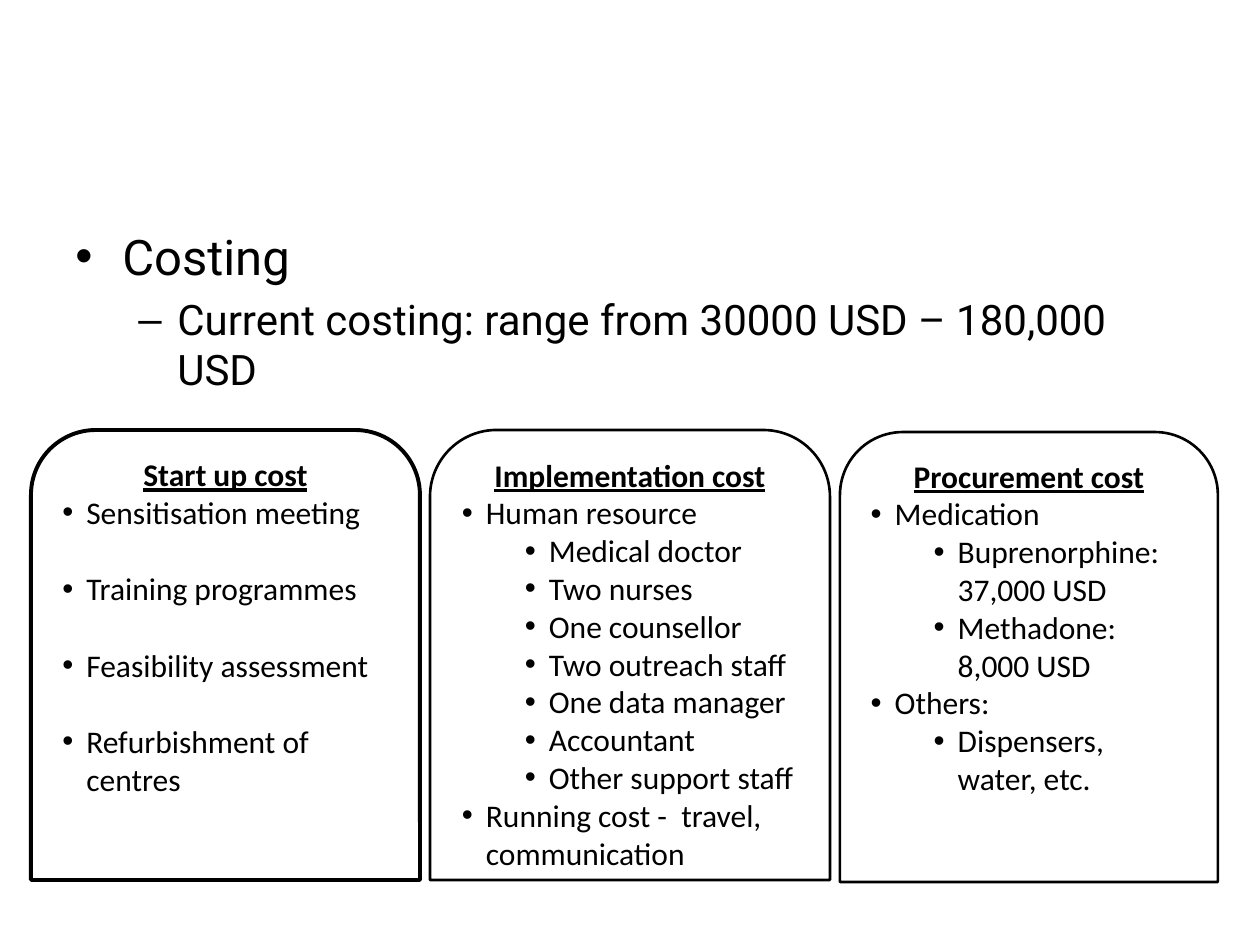
from lxml import etree
from pptx import Presentation
from pptx.dml.color import RGBColor
from pptx.enum.shapes import MSO_SHAPE
from pptx.enum.text import MSO_ANCHOR, PP_ALIGN
from pptx.oxml.ns import qn
from pptx.util import Emu, Pt

CARD_SHAPE = MSO_SHAPE.ROUND_2_SAME_RECTANGLE
TOP = MSO_ANCHOR.TOP
LEFT, CENTER = PP_ALIGN.LEFT, PP_ALIGN.CENTER
BLACK, WHITE = "000000", "FFFFFF"
PX_PER_INCH = 126


def px(count):
    return Emu(round(count * 914400 / PX_PER_INCH))


def color(hex_text):
    return RGBColor.from_string(hex_text)


def add_bullet(para, symbol, margin, hang):
    properties = para._p.get_or_add_pPr()
    properties.set("marL", str(px(margin)))
    properties.set("indent", str(-px(hang)))
    font = etree.SubElement(properties, qn("a:buFont"))
    font.set("typeface", "Arial")
    etree.SubElement(properties, qn("a:buChar")).set("char", symbol)


def style(para, font_name, size, bold=False):
    for span in para.runs:
        span.font.name = font_name
        span.font.size = Pt(size)
        span.font.bold = span.font.underline = bold
        span.font.color.rgb = color(BLACK)


def add_intro(page, left, top, width, height, lines):
    box = page.shapes.add_textbox(px(left), px(top), px(width), px(height))
    frame = box.text_frame
    frame.word_wrap = True
    frame.text = "\n".join(text for text, *_ in lines)
    for para, (_, symbol, margin, hang, size, level) in zip(frame.paragraphs, lines):
        para.level = level
        add_bullet(para, symbol, margin, hang)
        if level:
            para.space_before = Pt(size * 0.2)
        style(para, "Roboto", size)


def add_card(page, left, top, width, height, line_width, gap, heading, items):
    card = page.shapes.add_shape(CARD_SHAPE, px(left), px(top), px(width), px(height))
    card.shadow.inherit = False
    card.fill.solid()
    card.fill.fore_color.rgb = color(WHITE)
    card.line.color.rgb = color(BLACK)
    card.line.width = Pt(line_width)

    frame = card.text_frame
    frame.word_wrap = True
    frame.vertical_anchor = TOP
    frame.text = "\n".join([heading] + [text for _, text in items])
    title, *entries = frame.paragraphs
    title.alignment = CENTER
    style(title, "Calibri", 18, bold=True)
    for index, (para, (level, _)) in enumerate(zip(entries, items)):
        para.alignment = LEFT
        para.level = level
        add_bullet(para, "•", 24 + 63 * level, 24)
        if index:
            para.space_before = Pt(gap)
        style(para, "Calibri", 18)


INTRO = [
    # text, bullet, margin, hang, size, level
    ("Costing", "•", 47, 47, 28, 0),
    ("Current costing: range from 30000 USD – 180,000 USD", "–", 102, 39, 24, 1),
]
STAFF = ["Medical doctor", "Two nurses", "One counsellor", "Two outreach staff",
         "One data manager", "Accountant", "Other support staff"]
CARDS = [
    # left, top, width, line width, gap between items, heading, (level, item)
    (31, 430, 389, 2.25, 22, "Start up cost", [
        (0, "Sensitisation meeting"),
        (0, "Training programmes"),
        (0, "Feasibility assessment"),
        (0, "Refurbishment of centres"),
    ]),
    (430, 430, 400, 1.5, 0, "Implementation cost", [
        (0, "Human resource"),
        *[(1, role) for role in STAFF],
        (0, "Running cost -  travel, communication"),
    ]),
    (840, 432, 378, 1.5, 0, "Procurement cost", [
        (0, "Medication"),
        (1, "Buprenorphine: 37,000 USD"),
        (1, "Methadone: 8,000 USD"),
        (0, "Others:"),
        (1, "Dispensers, water, etc."),
    ]),
]


def main():
    deck = Presentation()
    deck.slide_width, deck.slide_height = px(1260), px(945)
    page = deck.slides.add_slide(deck.slide_layouts[6])

    # Costing range
    add_intro(page, 63, 220, 1134, 210, INTRO)

    # Cost breakdown cards
    for left, top, width, line_width, gap, heading, items in CARDS:
        add_card(page, left, top, width, 450, line_width, gap, heading, items)

    deck.save("out.pptx")


if __name__ == "__main__":
    main()
